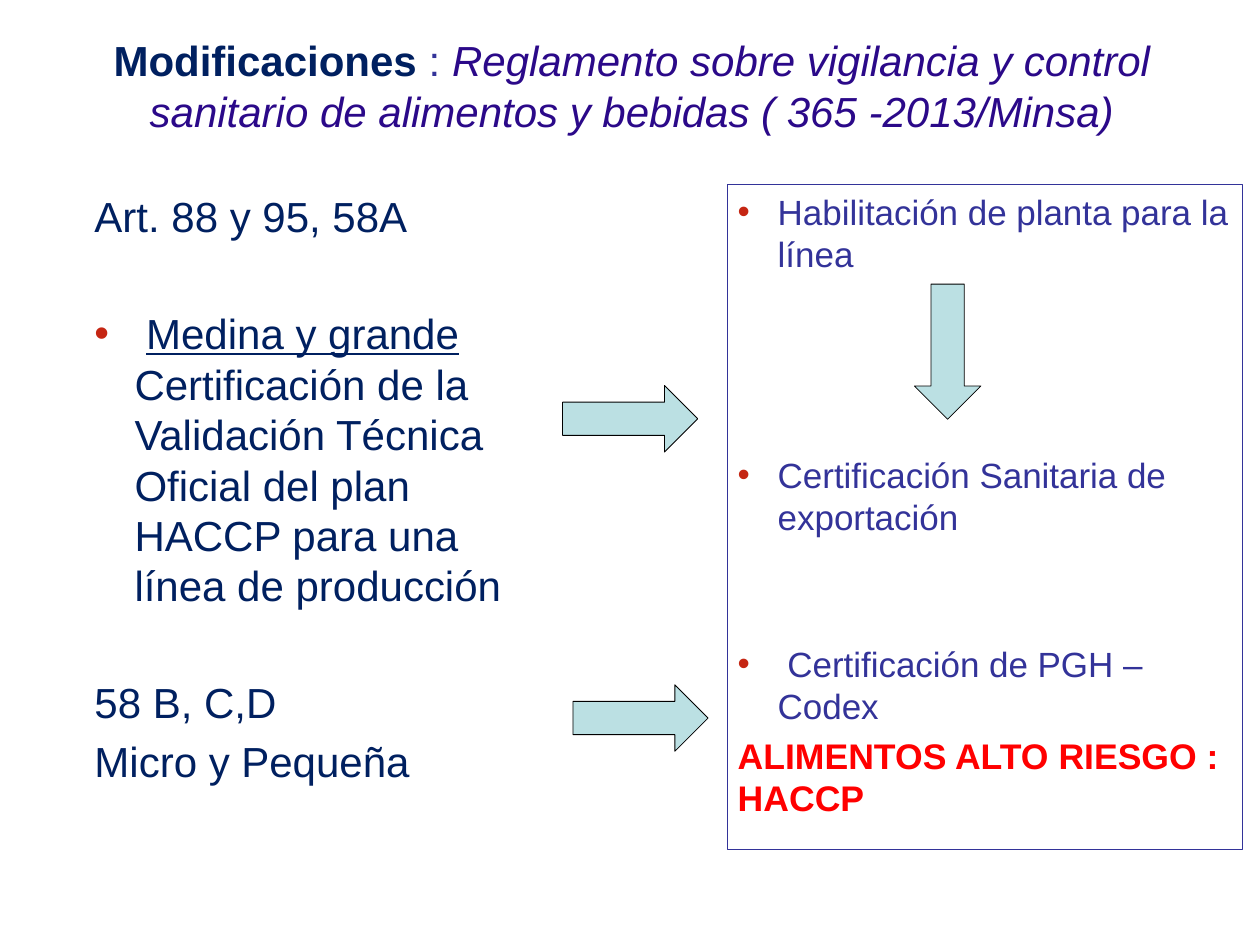
from dataclasses import dataclass

from lxml import etree
from pptx import Presentation
from pptx.dml.color import RGBColor
from pptx.enum.shapes import MSO_SHAPE
from pptx.enum.text import MSO_ANCHOR, MSO_AUTO_SIZE, PP_ALIGN
from pptx.oxml.ns import qn
from pptx.util import Cm, Pt

RIGHT_ARROW, DOWN_ARROW = MSO_SHAPE.RIGHT_ARROW, MSO_SHAPE.DOWN_ARROW
TOP, MIDDLE = MSO_ANCHOR.TOP, MSO_ANCHOR.MIDDLE
CENTER = PP_ALIGN.CENTER
NO_AUTOFIT = MSO_AUTO_SIZE.NONE


@dataclass(frozen=True)
class Theme:
    font: str = "Arial"
    navy: str = "002060"
    indigo: str = "333399"
    violet: str = "2B0989"
    alert: str = "FF0000"
    bullet: str = "C52613"
    arrow: str = "BBE0E3"
    outline: str = "000000"
    paper: str = "FFFFFF"
    large: float = 37.8
    alert_size: float = 32
    medium: float = 31.5
    line: float = 0.75


THEME = Theme()


def rgb(value):
    return RGBColor.from_string(value)


def set_font(font, color, size):
    font.name = THEME.font
    font.size = Pt(size)
    font.color.rgb = rgb(color)


def place(shape, box):
    shape.left, shape.top, shape.width, shape.height = (Cm(v) for v in box)


def prepare_frame(placeholder, box, anchor):
    place(placeholder, box)
    frame = placeholder.text_frame
    frame.word_wrap = True
    frame.auto_size = NO_AUTOFIT
    frame.vertical_anchor = anchor
    frame.margin_left = frame.margin_right = Cm(0.33)
    frame.margin_top = frame.margin_bottom = Cm(0.18)
    return frame


def set_bullet(paragraph, bulleted):
    properties = paragraph._p.get_or_add_pPr()
    indent = Cm(1.27) if bulleted else 0
    properties.set("marL", str(indent))
    properties.set("indent", str(-indent))
    if bulleted:
        color = etree.SubElement(properties, qn("a:buClr"))
        etree.SubElement(color, qn("a:srgbClr"), val=THEME.bullet)
        etree.SubElement(properties, qn("a:buFont"), typeface=THEME.font)
        etree.SubElement(properties, qn("a:buChar"), char="•")
    else:
        etree.SubElement(properties, qn("a:buNone"))


def add_heading(placeholder, box):
    paragraph = prepare_frame(placeholder, box, MIDDLE).paragraphs[0]
    paragraph.alignment = CENTER
    parts = [
        ("Modificaciones", THEME.navy, True, False),
        (" : ", THEME.indigo, False, False),
        ("Reglamento sobre vigilancia y control sanitario de alimentos"
         " y bebidas ( 365 -2013/Minsa)", THEME.violet, False, True),
    ]
    for text, color, bold, italic in parts:
        run = paragraph.add_run()
        run.text = text
        set_font(run.font, color, THEME.large)
        run.font.bold, run.font.italic = bold, italic


def add_list(placeholder, box, items, color, size):
    frame = prepare_frame(placeholder, box, TOP)
    for index, (text, bulleted, gap) in enumerate(items):
        paragraph = frame.add_paragraph() if index else frame.paragraphs[0]
        paragraph.space_before = Pt(gap)
        set_bullet(paragraph, bulleted)
        set_font(paragraph.font, color, size)
        paragraph.add_run().text = text
    return frame


def add_articles(placeholder, box):
    items = [
        ("Art. 88 y 95, 58A", False, 0),
        (" ", True, 60),
        ("58 B, C,D", False, 60),
        ("Micro y Pequeña", False, 7.5),
    ]
    frame = add_list(placeholder, box, items, THEME.navy, THEME.large)
    company_size = frame.paragraphs[1].add_run()
    company_size.text = "Medina y grande "
    company_size.font.underline = True
    frame.paragraphs[1].add_run().text = (
        "Certificación de la Validación Técnica Oficial del plan HACCP"
        " para una línea de producción")


def add_certifications(placeholder, box):
    placeholder.fill.solid()
    placeholder.fill.fore_color.rgb = rgb(THEME.paper)
    placeholder.line.color.rgb = rgb(THEME.indigo)
    placeholder.line.width = Pt(THEME.line)
    items = [
        ("Habilitación de planta para la línea", True, 0),
        ("Certificación Sanitaria de exportación", True, 161),
        (" Certificación de PGH –Codex", True, 94.5),
        ("ALIMENTOS ALTO RIESGO : HACCP", False, 6.4),
    ]
    frame = add_list(placeholder, box, items, THEME.indigo, THEME.medium)
    warning = frame.paragraphs[-1].font
    set_font(warning, THEME.alert, THEME.alert_size)
    warning.bold = True


def add_arrow(slide, direction, box):
    arrow = slide.shapes.add_shape(direction, *(Cm(v) for v in box))
    arrow.shadow.inherit = False
    arrow.fill.solid()
    arrow.fill.fore_color.rgb = rgb(THEME.arrow)
    arrow.line.color.rgb = rgb(THEME.outline)
    arrow.line.width = Pt(THEME.line)


def build_regulation_slide(presentation):
    slide = presentation.slides.add_slide(presentation.slide_layouts[3])
    heading, articles, certifications = list(slide.placeholders)[:3]
    add_heading(heading, (1.63, 0.9, 36.86, 3.6))
    add_articles(articles, (2.67, 5.87, 14.86, 19.53))
    add_certifications(certifications, (23.09, 5.87, 16.36, 21.11))
    length, breadth = 4.29, 2.11
    add_arrow(slide, RIGHT_ARROW, (17.86, 12.24, length, breadth))
    add_arrow(slide, DOWN_ARROW, (29.03, 9.02, breadth, length))
    add_arrow(slide, RIGHT_ARROW, (18.19, 21.74, length, breadth))


def main():
    presentation = Presentation()
    presentation.slide_width, presentation.slide_height = Cm(40), Cm(30)
    build_regulation_slide(presentation)
    presentation.save("out.pptx")


if __name__ == "__main__":
    main()
